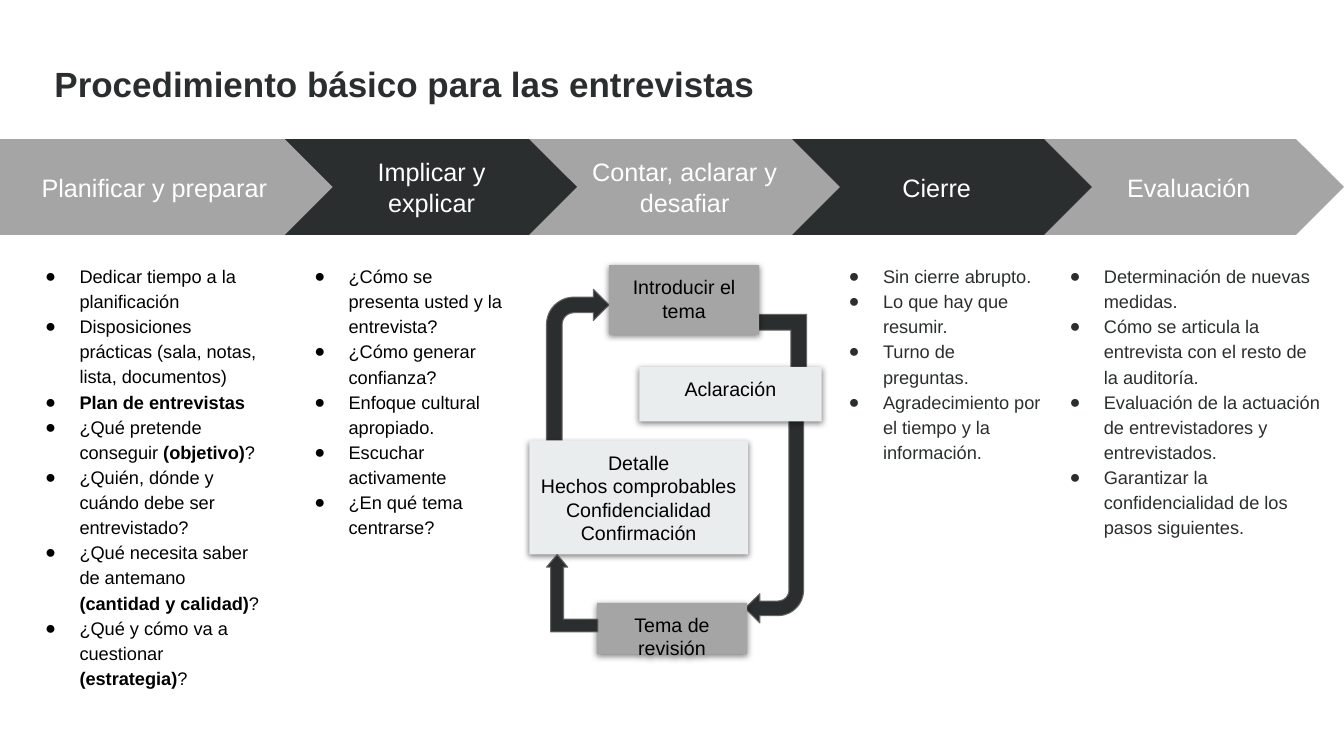
"""Build the slide on the basic steps of an interview."""
from lxml import etree
from pptx import Presentation, util as u
from pptx.dml.color import RGBColor
from pptx.enum import shapes, text
from pptx.oxml import parse_xml
from pptx.oxml.ns import nsdecls, qn

DARK, GREY, PALE, BLACK, WHITE = "2B2E2F", "A5A5A5", "E9EDEE", "000000", "FFFFFF"
FONT = "Arial"
KIND = shapes.MSO_SHAPE
LEFT, MID = text.PP_ALIGN.LEFT, text.PP_ALIGN.CENTER
TOP, CORE = text.MSO_ANCHOR.TOP, text.MSO_ANCHOR.MIDDLE


def paint(fill, tone):
    fill.solid()
    fill.fore_color.rgb = RGBColor.from_string(tone)


def write(shape, lines, size, tone, align=LEFT, anchor=TOP, inset=0.1, space=1.0):
    frame = shape.text_frame
    frame.word_wrap = True
    frame.vertical_anchor = anchor
    for side in ("left", "right", "top", "bottom"):
        setattr(frame, "margin_" + side, u.Inches(inset))
    frame.text = "\n".join([""] * len(lines))
    for para, line in zip(frame.paragraphs, lines):
        para.alignment = align
        para.line_spacing = space
        for i, part in enumerate(line.split("*")):
            if part:
                run = para.add_run()
                run.text = part
                run.font.name = FONT
                run.font.size = u.Pt(size)
                run.font.bold = i % 2 == 1
                paint(run.font.fill, tone)


deck = Presentation()
deck.slide_width, deck.slide_height = u.Inches(13.33), u.Inches(7.5)
slide = deck.slides.add_slide(deck.slide_layouts[6])
tree = slide.shapes

title = tree.add_textbox(*map(u.Inches, (0.54, 0.54, 10.51, 0.66)))
write(title, ["*Procedimiento básico para las entrevistas*"], 25, DARK, inset=0, space=1.2)

steps = [
    (KIND.CHEVRON, 2.74, 3.08, DARK, "Implicar y explicar"),
    (KIND.PENTAGON, 0, 3.3, GREY, "Planificar y preparar"),
    (KIND.CHEVRON, 10.25, 3.08, GREY, "Evaluación"),
    (KIND.CHEVRON, 7.75, 3.08, DARK, "Cierre"),
    (KIND.CHEVRON, 5.25, 3.08, GREY, "Contar, aclarar y desafiar"),
]
for kind, x, wide, tone, label in steps:
    step = tree.add_shape(kind, *map(u.Inches, (x, 1.38, wide, 0.95)))
    step.shadow.inherit = False
    step.adjustments[0] = 0.5
    paint(step.fill, tone)
    step.line.fill.background()
    write(step, [label], 18, WHITE, MID, CORE)

curve, bend = (0.25, 0.25, 0.25, 0.438), (0.25, 0.207, 0.25)
cycle = [
    (KIND.BENT_ARROW, (7.39, 4.06, 0.58, 2.12), DARK, curve, 180, []),
    (KIND.BENT_ARROW, (5.42, 2.87, 0.62, 1.61), DARK, curve, 0, []),
    (KIND.BENT_UP_ARROW, (7.43, 3.12, 0.62, 0.79), DARK, bend, 180, []),
    (KIND.RECTANGLE, (6.04, 2.63, 1.49, 0.69), GREY, (), 0, ["Introducir el tema"]),
    (KIND.RECTANGLE, (5.92, 5.98, 1.49, 0.51), GREY, (), 0, ["Tema de revisión"]),
    (KIND.RECTANGLE, (6.34, 3.64, 1.81, 0.54), PALE, (), 0, ["Aclaración"]),
    (KIND.RECTANGLE, (5.25, 4.37, 2.17, 1.13), PALE, (), 0,
     ["Detalle", "Hechos comprobables", "Confidencialidad", "Confirmación"]),
    (KIND.BENT_UP_ARROW, (5.42, 5.5, 0.51, 0.77), DARK, bend, 0, []),
]
shade = (
    f'<a:outerShdw {nsdecls("a")} blurRad="{u.Pt(4.5)}" dist="{u.Pt(1.5)}" dir="5400000" '
    f'algn="ctr" rotWithShape="0"><a:srgbClr val="{BLACK}"><a:alpha val="49000"/>'
    '</a:srgbClr></a:outerShdw>'
)
for kind, at, tone, bends, turn, lines in cycle:
    item = tree.add_shape(kind, *map(u.Inches, at))
    item.shadow.inherit = False
    item.rotation = turn
    for i, bent in enumerate(bends):
        item.adjustments[i] = bent
    paint(item.fill, tone)
    props = item.element.spPr
    if kind == KIND.BENT_UP_ARROW:
        props.find(qn("a:xfrm")).set("flipH", "1")
    if lines:
        item.line.fill.background()
        props.find(qn("a:effectLst")).append(parse_xml(shade))
        write(item, lines, 14, BLACK, MID)
    else:
        paint(item.line.fill, "656565")
        item.line.width = u.Pt(0.75)

notes = [
    (0.19, 2.55, 2.34, BLACK, [
        "Dedicar tiempo a la planificación",
        "Disposiciones prácticas (sala, notas, lista, documentos)",
        "*Plan de entrevistas*",
        "¿Qué pretende conseguir *(objetivo)*?",
        "¿Quién, dónde y cuándo debe ser entrevistado?",
        "¿Qué necesita saber de antemano *(cantidad y calidad)*?",
        "¿Qué y cómo va a cuestionar *(estrategia)*?"]),
    (2.86, 2.27, 3.31, BLACK, [
        "¿Cómo se presenta usted y la entrevista?",
        "¿Cómo generar confianza?",
        "Enfoque cultural apropiado.",
        "Escuchar activamente",
        "¿En qué tema centrarse?"]),
    (8.16, 2.27, 2.21, DARK, [
        "Sin cierre abrupto.",
        "Lo que hay que resumir.",
        "Turno de preguntas.",
        "Agradecimiento por el tiempo y la información."]),
    (10.35, 2.89, 3.19, DARK, [
        "Determinación de nuevas medidas.",
        "Cómo se articula la entrevista con el resto de la auditoría.",
        "Evaluación de la actuación de entrevistadores y entrevistados.",
        "Garantizar la confidencialidad de los pasos siguientes."]),
]
for x, wide, high, tone, lines in notes:
    note = tree.add_textbox(*map(u.Inches, (x, 2.5, wide, high)))
    write(note, lines, 13, tone, space=1.15)
    for para in note.text_frame.paragraphs:
        props = para._p.get_or_add_pPr()
        props.set("marL", str(u.Inches(0.5)))
        props.set("indent", str(u.Inches(-0.34)))
        ink = etree.SubElement(props, qn("a:buClr"))
        etree.SubElement(ink, qn("a:srgbClr"), val=tone)
        etree.SubElement(props, qn("a:buFont"), typeface=FONT)
        etree.SubElement(props, qn("a:buChar"), char="●")

deck.save("out.pptx")
